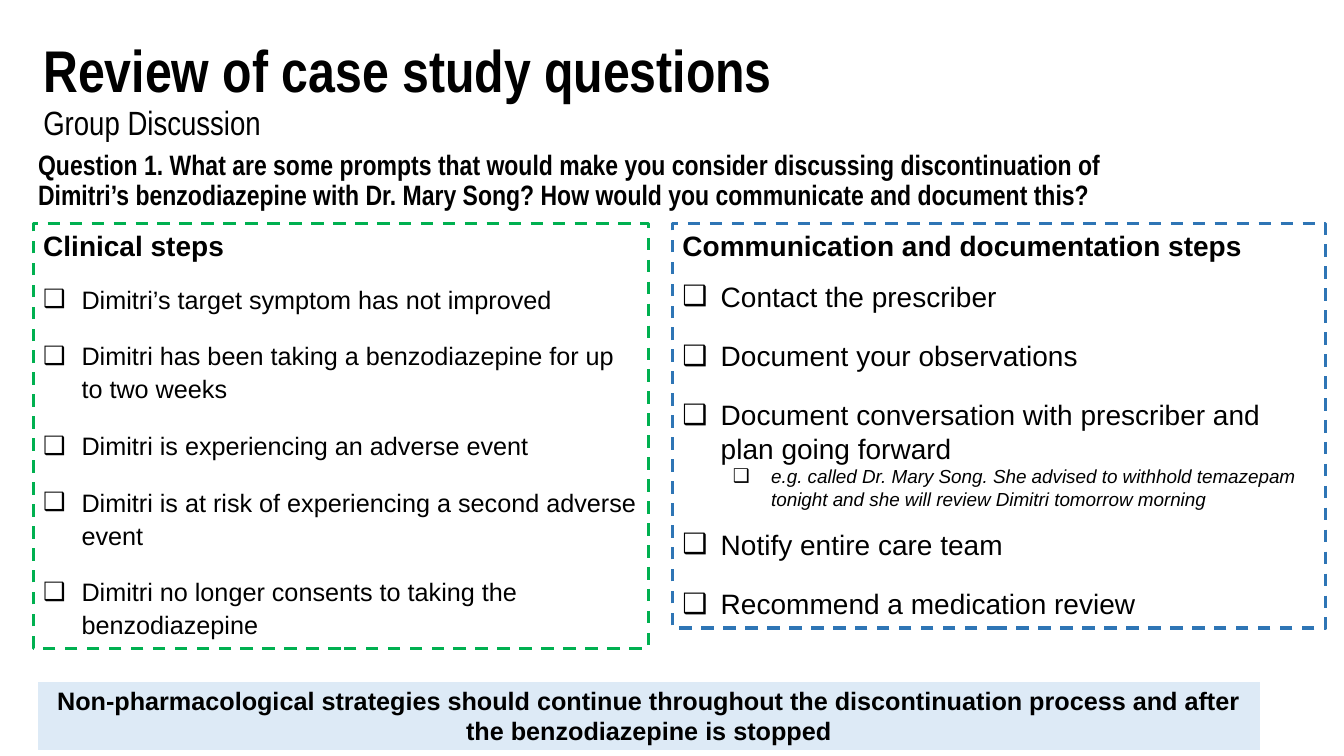
from lxml.etree import SubElement
from pptx import Presentation
from pptx.dml.color import RGBColor
from pptx.enum.dml import MSO_LINE
from pptx.enum.shapes import MSO_SHAPE
from pptx.enum.text import MSO_ANCHOR, MSO_AUTO_SIZE, PP_ALIGN
from pptx.oxml.ns import qn
from pptx.util import Inches, Pt

COLORS = {"text": "000000", "clinical": "00B050", "communication": "2E75B5",
          "banner": "DDEAF6", "white": "FFFFFF"}

# Each step: text, space before in points, and optionally its level
CLINICAL_STEPS = [
    ("Dimitri’s target symptom has not improved", 13.5),
    ("Dimitri has been taking a benzodiazepine for up to two weeks", 16.8),
    ("Dimitri is experiencing an adverse event", 16.8),
    ("Dimitri is at risk of experiencing a second adverse event", 16.8),
    ("Dimitri no longer consents to taking the benzodiazepine", 16.8),
]
COMMUNICATION_STEPS = [
    ("Contact the prescriber", 12.2),
    ("Document your observations", 18.3),
    ("Document conversation with prescriber and plan going forward", 18.3),
    ("e.g. called Dr. Mary Song. She advised to withhold temazepam tonight "
     "and she will review Dimitri tomorrow morning", 0, 1),
    ("Notify entire care team", 12.2),
    ("Recommend a medication review", 18.3),
]


class SlideBuilder:
    """Holds the style and the slide; places are percentages of its size."""

    def __init__(self, deck):
        self.deck = deck
        self.slide = deck.slides.add_slide(deck.slide_layouts[6])
        self.body_font = "Arial"
        self.heading_font = "Arial Narrow"

    def place(self, left, top, width, height):
        across, down = self.deck.slide_width / 100, self.deck.slide_height / 100
        return [round(length) for length in
                (left * across, top * down, width * across, height * down)]

    def prepare(self, frame):
        frame.word_wrap = True
        frame.auto_size = MSO_AUTO_SIZE.NONE
        frame.vertical_anchor = MSO_ANCHOR.TOP

    def fill_para(self, para, text, size, font, bold=False, italic=False):
        para.text = text
        for span in para.runs:
            span.font.size = Pt(size)
            span.font.name = font
            span.font.bold = bold
            span.font.italic = italic
            span.font.color.rgb = RGBColor.from_string(COLORS["text"])

    def heading(self, area, text, size, bold=True):
        frame = self.slide.shapes.add_textbox(*self.place(*area)).text_frame
        self.prepare(frame)
        para = frame.paragraphs[0]
        para.line_spacing = 0.9
        self.fill_para(para, text, size, self.heading_font, bold)

    def box(self, area, line, fill=None, dash=None):
        box = self.slide.shapes.add_shape(MSO_SHAPE.RECTANGLE, *self.place(*area))
        box.shadow.inherit = False
        if fill:
            box.fill.solid()
            box.fill.fore_color.rgb = RGBColor.from_string(COLORS[fill])
        else:
            box.fill.background()
        box.line.color.rgb = RGBColor.from_string(COLORS[line])
        box.line.width = Pt(2.25)
        if dash:
            box.line.dash_style = dash
        self.prepare(box.text_frame)
        return box.text_frame

    def bullet(self, para, level):
        properties = para._p.get_or_add_pPr()
        properties.set("marL", str(Inches(0.38 + 0.5 * level)))
        properties.set("indent", str(Inches(-0.38)))
        color = SubElement(properties, qn("a:buClr"))
        SubElement(color, qn("a:srgbClr"), val=COLORS["text"])
        SubElement(properties, qn("a:buFont"), typeface=self.body_font)
        SubElement(properties, qn("a:buChar"), char="❑")

    def checklist(self, area, line, title, steps, size, spacing=None):
        frame = self.box(area, line, dash=MSO_LINE.DASH)
        title_para = frame.paragraphs[0]
        title_para.alignment = PP_ALIGN.LEFT
        self.fill_para(title_para, title, 20, self.body_font, bold=True)
        for text, before, *levels in steps:
            level = sum(levels)
            para = frame.add_paragraph()
            self.bullet(para, level)
            para.level = level
            para.alignment = PP_ALIGN.LEFT
            para.space_before = Pt(before)
            if spacing:
                para.line_spacing = Pt(spacing)
            self.fill_para(para, text, 13.5 if level else size, self.body_font,
                           italic=bool(level))

    def banner(self, area, text):
        para = self.box(area, "white", fill="banner").paragraphs[0]
        para.alignment = PP_ALIGN.CENTER
        self.fill_para(para, text, 18, self.body_font, bold=True)


def main():
    deck = Presentation()
    deck.slide_width, deck.slide_height = Inches(13.33), Inches(7.5)
    page = SlideBuilder(deck)
    page.heading((2.48, 13.47, 61.14, 6.8), "Group Discussion", 24, bold=False)
    page.heading((2.48, 4.8, 61.14, 10.8), "Review of case study questions", 42)
    page.heading((2.1, 19.33, 83.2, 9.47),
                 "Question 1. What are some prompts that would make you consider "
                 "discussing discontinuation of Dimitri’s benzodiazepine with "
                 "Dr. Mary Song? How would you communicate and document this?", 20)
    page.checklist((2.48, 29.6, 45.76, 56.13), "clinical", "Clinical steps",
                   CLINICAL_STEPS, 18, spacing=23.6)
    page.checklist((50.04, 29.6, 48.61, 53.47), "communication",
                   "Communication and documentation steps",
                   COMMUNICATION_STEPS, 20)
    page.banner((2.7, 90, 91.15, 9.47),
                "Non-pharmacological strategies should continue throughout the "
                "discontinuation process and after the benzodiazepine is stopped")
    deck.save("out.pptx")


if __name__ == "__main__":
    main()
